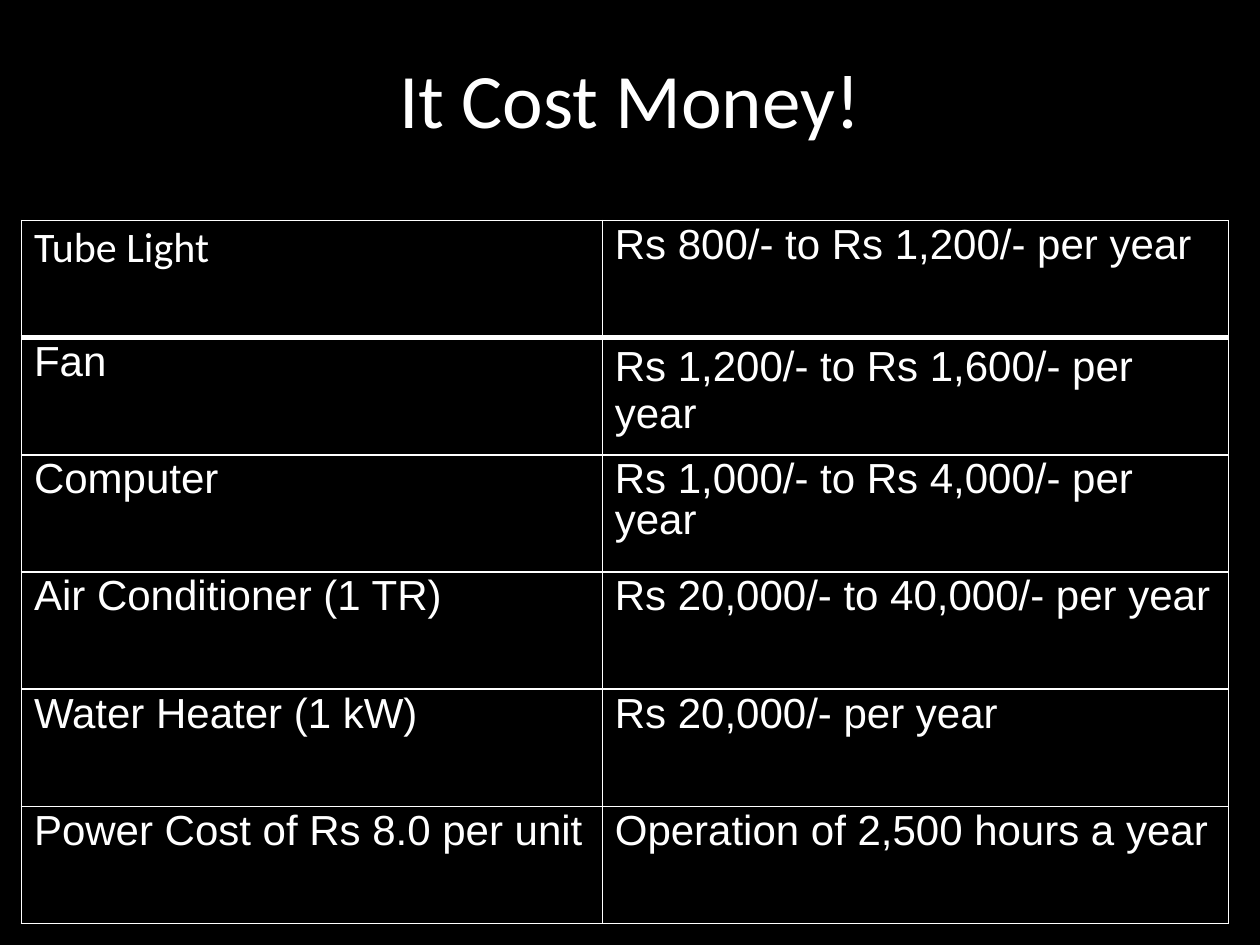
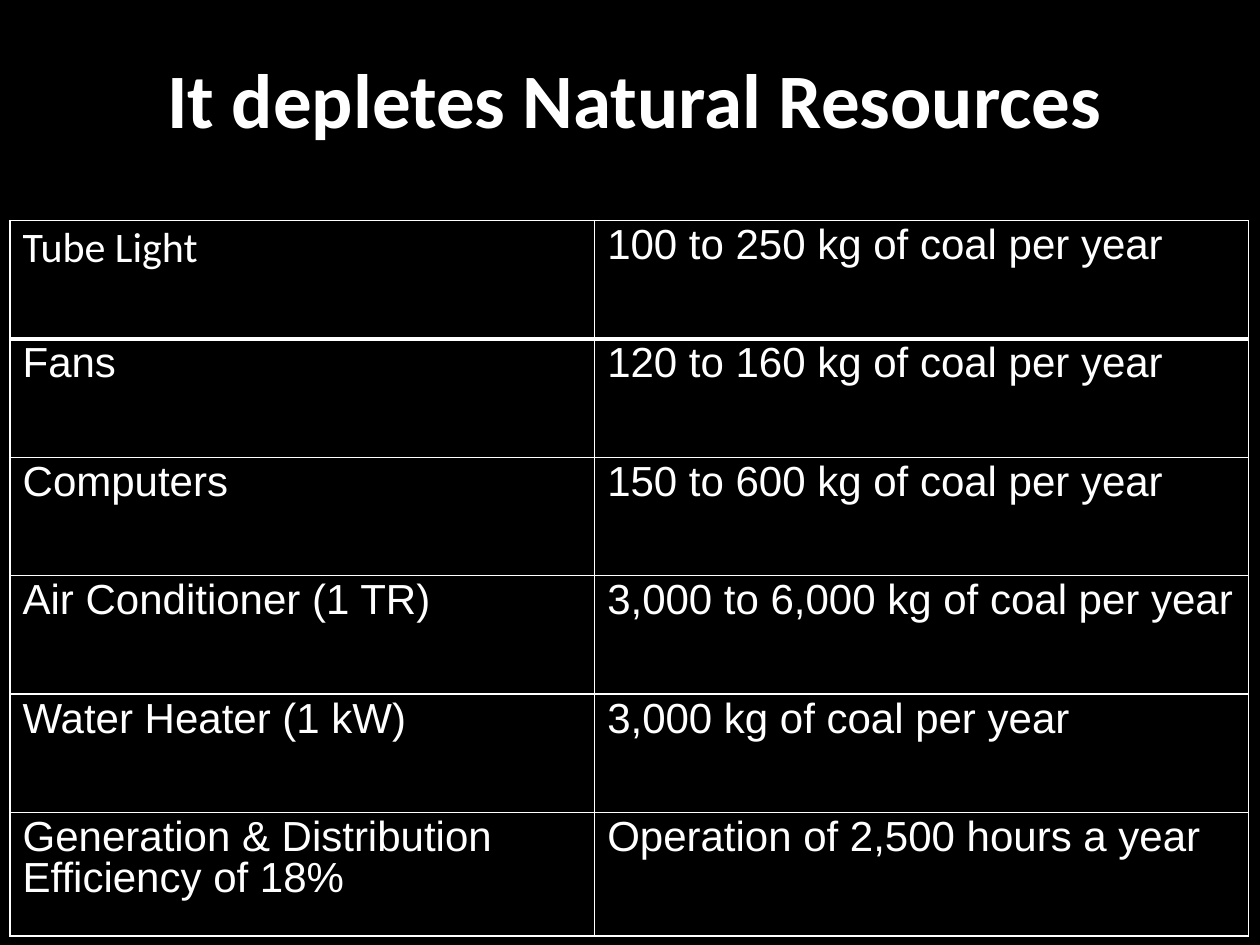
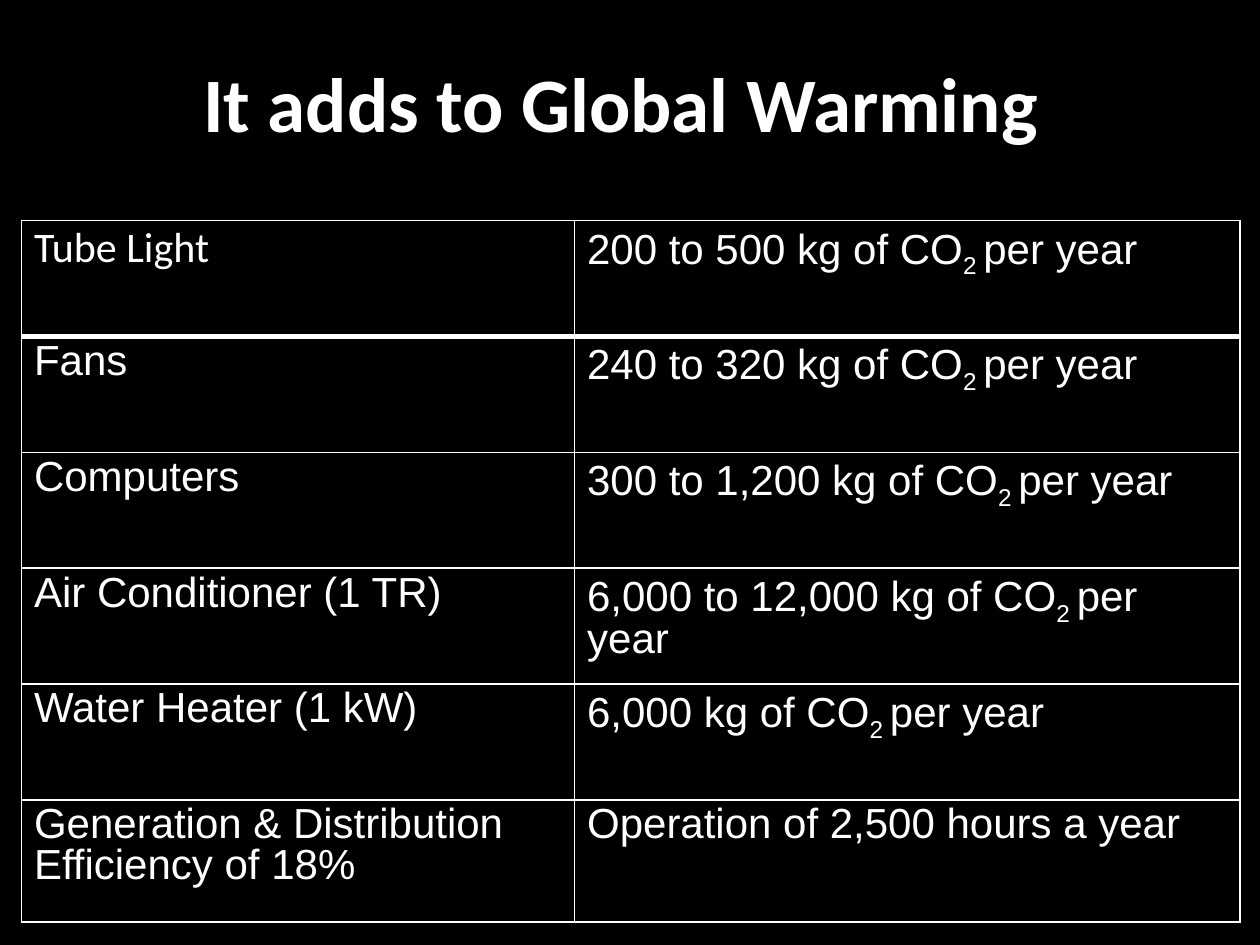
"""Build three table slides on the cost of running home appliances."""
from dataclasses import dataclass

from lxml import etree
from pptx import Presentation
from pptx.dml.color import RGBColor
from pptx.enum.text import MSO_ANCHOR, PP_ALIGN
from pptx.oxml.ns import qn
from pptx.util import Inches, Pt

CENTER = PP_ALIGN.CENTER
MIDDLE = MSO_ANCHOR.MIDDLE
BLANK = 6


@dataclass(frozen=True)
class Theme:
    """Colours, fonts and sizes that all slides share."""
    back: str = "000000"
    ink: str = "FFFFFF"
    head_font: str = "Calibri"
    body_font: str = "Arial"
    title_size: int = 44
    body_size: int = 24
    line_spacing: float = 0.87
    rule: int = 1
    header_rule: int = 3
    title_height: float = 1.55
    table_top: float = 1.75


class Deck:
    """Holds the theme, the presentation and the current slide."""

    def __init__(self, theme):
        """Start an empty 4:3 presentation."""
        self.theme = theme
        self.prs = Presentation()
        self.prs.slide_width, self.prs.slide_height = Inches(10), Inches(7.5)
        self.s = None

    def slide(self):
        """Add a blank slide with the theme background."""
        self.s = self.prs.slides.add_slide(self.prs.slide_layouts[BLANK])
        self.fill(self.s.background.fill)

    def fill(self, fill):
        """Paint a fill in the background colour."""
        fill.solid()
        fill.fore_color.rgb = RGBColor.from_string(self.theme.back)

    def run(self, p, text, **fmt):
        """Add a run in the ink colour with the given font values."""
        r = p.add_run()
        r.text = text
        for name, value in fmt.items():
            setattr(r.font, name, value)
        r.font.color.rgb = RGBColor.from_string(self.theme.ink)
        return r

    def title(self, text, left=0, top=0, bold=False):
        """Add a centred title that reaches the right edge."""
        t = self.theme
        sp = self.s.shapes.add_textbox(Inches(left), Inches(top),
                                       Inches(10 - left), Inches(t.title_height))
        tf = sp.text_frame
        for name, value in {"word_wrap": True, "vertical_anchor": MIDDLE}.items():
            setattr(tf, name, value)
        p = tf.paragraphs[0]
        p.alignment = CENTER
        self.run(p, text, name=t.head_font, size=Pt(t.title_size), bold=bold)

    def borders(self, cell, **widths):
        """Draw the cell edges, with widths in points by tag."""
        tc_pr = cell._tc.get_or_add_tcPr()
        for i, (tag, width) in enumerate(widths.items()):
            ln = etree.Element(qn(f"a:{tag}"), w=str(Pt(width)))
            solid = etree.SubElement(ln, qn("a:solidFill"))
            etree.SubElement(solid, qn("a:srgbClr"), val=self.theme.ink)
            tc_pr.insert(i, ln)

    def cell(self, cell, runs, font, spacing):
        """Fill a cell; every second run is a subscript."""
        self.fill(cell.fill)
        p = cell.text_frame.paragraphs[0]
        p.line_spacing = spacing
        for i, text in enumerate(runs):
            r = self.run(p, text, name=font, size=Pt(self.theme.body_size))
            if i % 2:
                r.font._element.set("baseline", "-25000")

    def table(self, left, cols, row_height, last_height, rows, loose=()):
        """Add a ruled table; loose cells keep the normal line spacing."""
        t = self.theme
        heights = [row_height] * (len(rows) - 1) + [last_height]
        tbl = self.s.shapes.add_table(
            len(rows), len(cols), Inches(left), Inches(t.table_top),
            Inches(sum(cols)), Inches(sum(heights))).table
        for name in ("first_row", "horz_banding"):
            setattr(tbl, name, False)
        for col, width in zip(tbl.columns, cols):
            col.width = Inches(width)
        for i, (row, height) in enumerate(zip(tbl.rows, heights)):
            row.height = Inches(height)
            for j, content in enumerate(rows[i]):
                runs = (content,) if isinstance(content, str) else content
                font = t.head_font if i == j == 0 else t.body_font
                spacing = None if (i, j) in loose else t.line_spacing
                self.cell(row.cells[j], runs, font, spacing)
                self.borders(row.cells[j], lnL=t.rule, lnR=t.rule,
                             lnT=t.header_rule if i == 1 else t.rule,
                             lnB=t.header_rule if i == 0 else t.rule)


def coal(amount):
    """Return the yearly coal use."""
    return f"{amount} kg of coal per year"


def co2(amount):
    """Return the yearly emission as runs around the subscript."""
    return f"{amount} kg of CO", "2 ", "per year"


def main():
    """Build and save the deck."""
    deck = Deck(Theme())
    cooling, heating = "Air Conditioner (1 TR)", "Water Heater (1 kW)"
    hours = "Operation of 2,500 hours a year"
    appliances = ["Tube Light", "Fans", "Computers", cooling, heating,
                  "Generation & Distribution Efficiency of 18%"]

    deck.slide()
    deck.title("It Cost Money!")
    deck.table(0.17, (4.61, 4.97), 0.93, 0.93, [
        ("Tube Light", "Rs 800/- to Rs 1,200/- per year"),
        ("Fan", "Rs 1,200/- to Rs 1,600/- per year"),
        ("Computer", "Rs 1,000/- to Rs 4,000/- per year"),
        (cooling, "Rs 20,000/- to 40,000/- per year"),
        (heating, "Rs 20,000/- per year"),
        ("Power Cost of Rs 8.0 per unit", hours),
    ], loose={(1, 1)})

    deck.slide()
    deck.title("It depletes Natural Resources", left=0.08, bold=True)
    amounts = ["100 to 250", "120 to 160", "150 to 600", "3,000 to 6,000", "3,000"]
    deck.table(0.08, (4.64, 5.19), 0.94, 0.98,
               list(zip(appliances, [*map(coal, amounts), hours])))

    deck.slide()
    deck.title("It adds to Global Warming ", top=0.03, bold=True)
    amounts = ["200 to 500", "240 to 320", "300 to 1,200", "6,000 to 12,000", "6,000"]
    deck.table(0.17, (4.39, 5.28), 0.92, 0.97,
               list(zip(appliances, [*map(co2, amounts), hours])))

    deck.prs.save("out.pptx")


if __name__ == "__main__":
    main()
